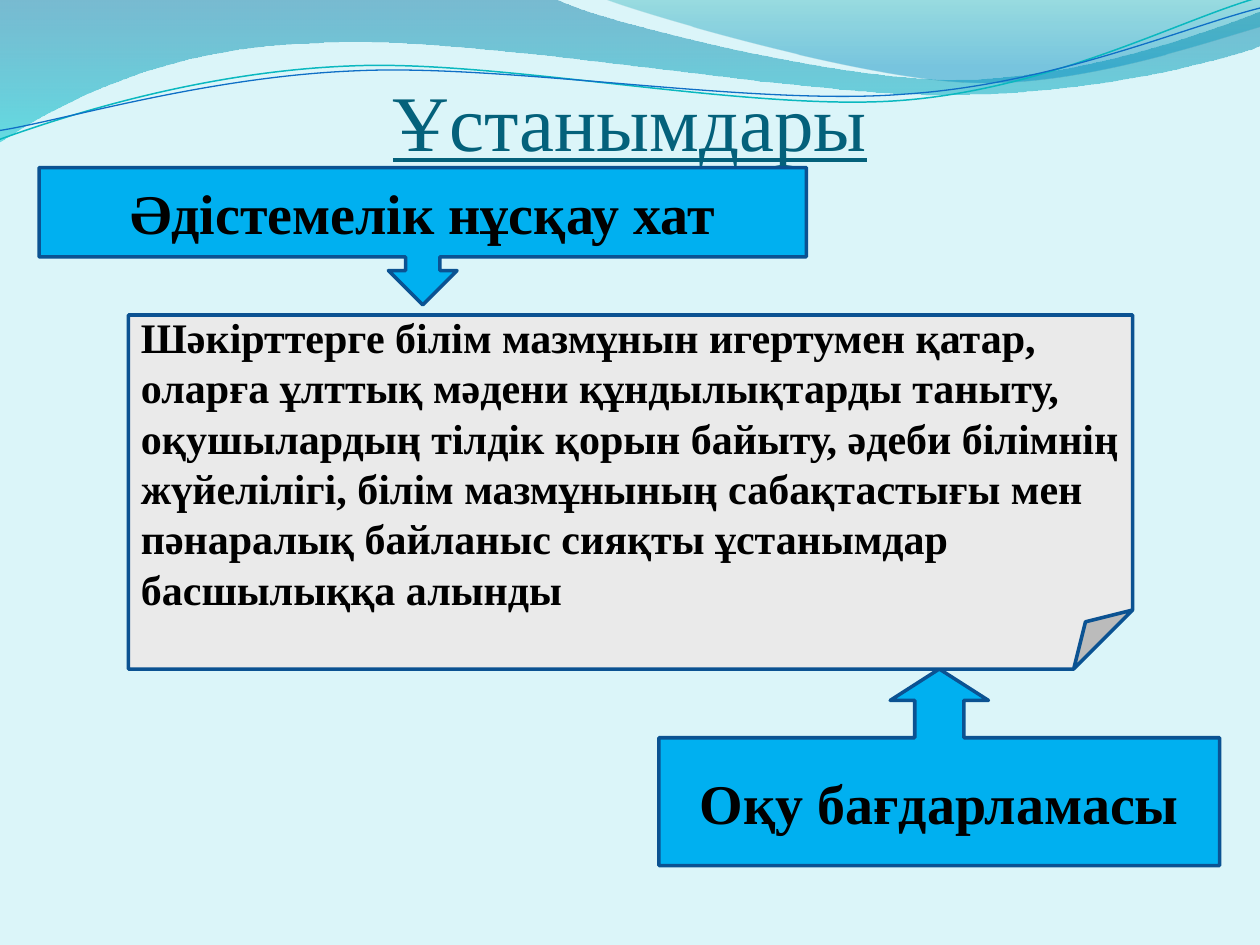
"""Build the slide about teaching principles, with a waved header and two callouts."""
from lxml.etree import SubElement
from pptx import Presentation
from pptx.dml.color import RGBColor
from pptx.enum.shapes import MSO_SHAPE as SHAPE
from pptx.enum.text import MSO_ANCHOR as ANCHOR, PP_ALIGN as ALIGN
from pptx.oxml.ns import qn
from pptx.util import Inches, Pt


def rgb(value):
    return RGBColor.from_string(value)


def add_curve(slide, start, parts, closed):
    anchors = [start] + [part[-2:] for part in parts]
    emu = [(Inches(x), Inches(y)) for x, y in anchors]
    builder = slide.shapes.build_freeform(*emu[0])
    builder.add_line_segments(emu[1:], close=closed)
    shape = builder.convert_to_shape()
    shape.shadow.inherit = False
    left, top = min(x for x, y in emu), min(y for x, y in emu)
    segments = list(shape.element.spPr.iter(qn("a:lnTo")))
    for segment, part in zip(segments, parts):
        if len(part) == 6:
            curve = segment.makeelement(qn("a:cubicBezTo"))
            for x, y in zip(part[::2], part[1::2]):
                pt = SubElement(curve, qn("a:pt"))
                pt.set("x", str(Inches(x) - left))
                pt.set("y", str(Inches(y) - top))
            segment.getparent().replace(segment, curve)
    return shape


prs = Presentation()
prs.slide_width, prs.slide_height = Inches(10), Inches(7.5)
slide = prs.slides.add_slide(prs.slide_layouts[6])
slide.background.fill.solid()
slide.background.fill.fore_color.rgb = rgb("DBF5F9")

waves = [
    ((0, 0),
     [(4.4, -0.01), (4.76, 0.17, 6.64, 0.63, 7.58, 0.63), (8.53, 0.63, 9.58, 0.26, 10, 0.09),
      (10.01, 0.36), (9.83, 0.44, 8.7, 0.76, 7.46, 0.75), (6.22, 0.75, 3.82, 0.28, 2.57, 0.34),
      (1.29, 0.36, 0.46, 0.83, -0.01, 1.13)],
     [(0, "0074A1", 45), (1, "00C6CF", 55)]),
    ((4.79, -0.01),
     [(5.09, 0.11, 6.82, 0.62, 7.69, 0.65), (8.56, 0.69, 9.61, 0.32, 10, 0.21), (10, 0)],
     [(0, "00A1A9", 30), (0.8, "008BBF", 45)]),
]
for start, parts, stops in waves:
    s = add_curve(slide, start, parts, True)
    s.line.fill.background()
    s.fill.gradient()
    s.fill.gradient_angle = 270
    for stop, (position, color, opacity) in zip(s.fill.gradient_stops, stops):
        stop.position = position
        stop.color.rgb = rgb(color)
    for clr, (position, color, opacity) in zip(s.element.spPr.iter(qn("a:srgbClr")), stops):
        SubElement(clr, qn("a:alpha")).set("val", str(opacity * 1000))

lines = [
    ((-0.02, 0.87),
     [(0.47, 0.72, 1.58, 0.41, 2.78, 0.42), (3.96, 0.42, 5.91, 0.93, 7.12, 0.9),
      (8.32, 0.87, 9.39, 0.36, 10, 0.22)], "0AB8BF", 0.85),
    ((-0.02, 0.8),
     [(0.46, 0.75, 1.64, 0.45, 2.83, 0.46), (4.03, 0.46, 5.96, 0.89, 7.16, 0.85),
      (8.35, 0.83, 9.42, 0.42, 10.02, 0.3)], "0F6FC6", 0.75),
]
for start, parts, color, width in lines:
    s = add_curve(slide, start, parts, False)
    s.rotation = 357.3
    s.fill.background()
    s.line.color.rgb = rgb(color)
    s.line.width = Pt(width)

title = slide.shapes.add_textbox(Inches(0.5), Inches(0.55), Inches(9), Inches(0.78))
tf = title.text_frame
tf.word_wrap = True
tf.vertical_anchor = ANCHOR.BOTTOM
tf.margin_left = tf.margin_right = tf.margin_bottom = 0
tf.text = "Ұстанымдары"
p = tf.paragraphs[0]
p.alignment = ALIGN.CENTER
r = p.runs[0]
r.font.name, r.font.size, r.font.underline = "Times New Roman", Pt(45), True
r.font.color.rgb = rgb("04617B")

body = ("Шәкірттерге білім мазмұнын игертумен қатар, оларға ұлттық мәдени құндылықтарды "
        "таныту, оқушылардың тілдік қорын байыту, әдеби білімнің жүйелілігі, білім мазмұнының "
        "сабақтастығы мен пәнаралық байланыс сияқты ұстанымдар басшылыққа алынды")
boxes = [
    (SHAPE.DOWN_ARROW_CALLOUT, (0.31, 1.33, 6.09, 1.09), [], "00B0F0",
     "Әдістемелік нұсқау хат", 32, ALIGN.CENTER),
    (SHAPE.UP_ARROW_CALLOUT, (5.23, 5.31, 4.45, 1.56), [0.25, 0.25, 0.16, 0.65], "00B0F0",
     "Оқу бағдарламасы", 32, ALIGN.CENTER),
    (SHAPE.FOLDED_CORNER, (1.02, 2.5, 7.97, 2.81), [], "EAEAEA", body, 24, ALIGN.LEFT),
]
for kind, place, adjustments, fill, text, size, align in boxes:
    s = slide.shapes.add_shape(kind, *map(Inches, place))
    for i, value in enumerate(adjustments):
        s.adjustments[i] = value
    s.shadow.inherit = False
    s.fill.solid()
    s.fill.fore_color.rgb = rgb(fill)
    s.line.color.rgb = rgb("0B5292")
    s.line.width = Pt(2)
    tf = s.text_frame
    tf.word_wrap = True
    tf.vertical_anchor = ANCHOR.MIDDLE
    tf.text = text
    p = tf.paragraphs[0]
    p.alignment = align
    r = p.runs[0]
    r.font.name, r.font.size, r.font.bold = "Times New Roman", Pt(size), True
    r.font.color.rgb = rgb("000000")

prs.save("out.pptx")
